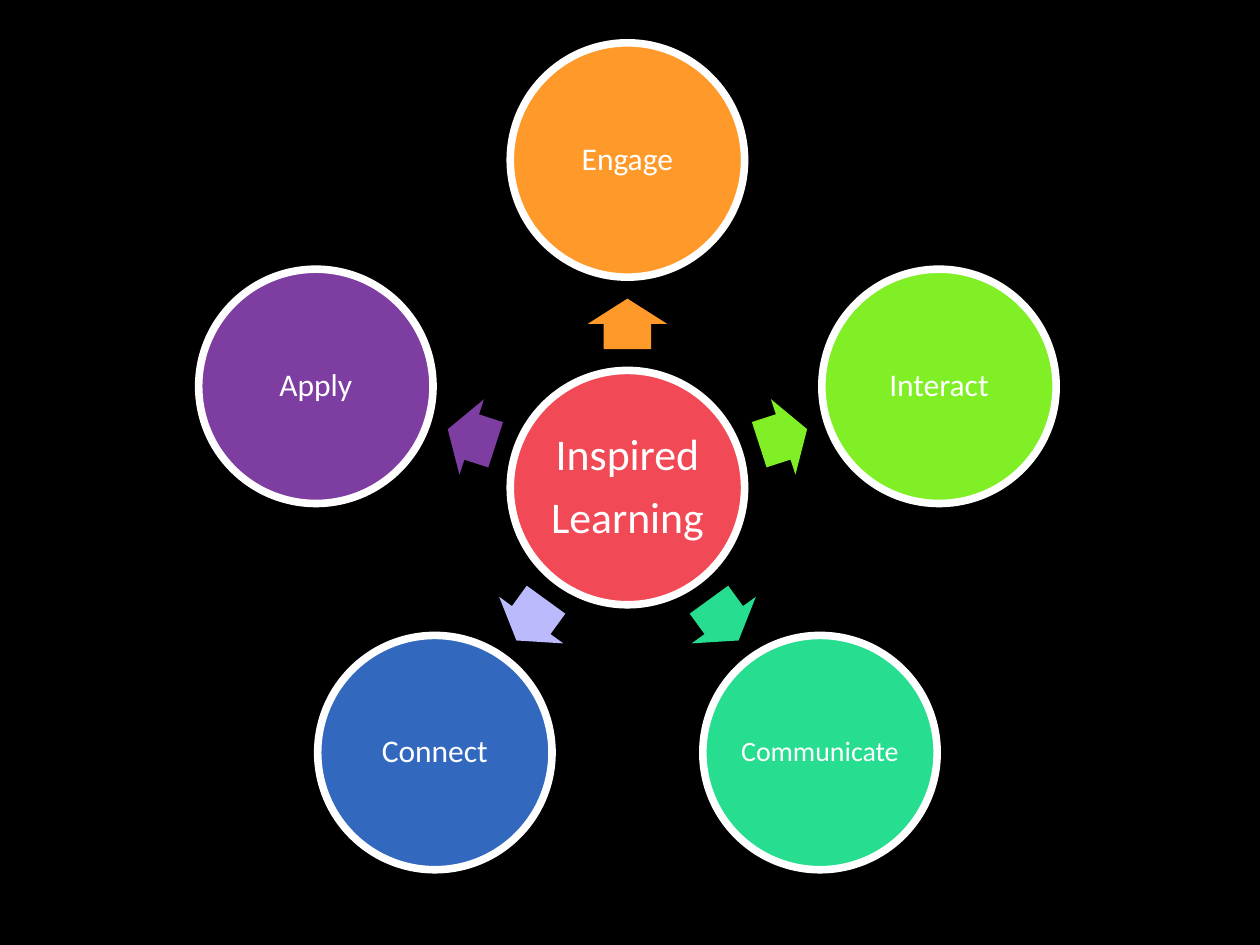
import math

import pptx
import pptx.dml.color
import pptx.enum.shapes
import pptx.enum.text
import pptx.util

Inches, Pt = pptx.util.Inches, pptx.util.Pt
SHAPE = pptx.enum.shapes.MSO_SHAPE

HUB = (["Inspired", "Learning"], 25, "F14955")
# label, text size, circle colour, arrow colour; clockwise from the top
SPOKES = [
    ("Engage", 18, "FF9929", "FF9929"),
    ("Interact", 18, "80EF26", "80EF26"),
    ("Communicate", 16, "26DD90", "26DD90"),
    ("Connect", 18, "3269BF", "BABAFD"),
    ("Apply", 18, "7D3DA1", "7D3DA1"),
]
CENTER_X, CENTER_Y = 4.98, 3.87
CIRCLE_RADIUS, ARROW_RADIUS = 2.6, 1.3
DIAMETER = 1.86
ARROW_W, ARROW_H = 0.4, 0.63
INSET = 0.03


def color(value):
    return pptx.dml.color.RGBColor.from_string(value)


def add_filled(s, kind, cx, cy, w, h, fill):
    """Add a preset shape centred on (cx, cy), without shadow or outline."""
    sp = s.shapes.add_shape(kind, Inches(cx - w / 2), Inches(cy - h / 2), Inches(w), Inches(h))
    sp.shadow.inherit = False
    sp.fill.solid()
    sp.fill.fore_color.rgb = color(fill)
    sp.line.fill.background()
    return sp


def add_circle(s, cx, cy, lines, size, fill):
    sp = add_filled(s, SHAPE.OVAL, cx, cy, DIAMETER, DIAMETER, fill)
    sp.line.color.rgb = color("FFFFFF")
    sp.line.width = Pt(4.33)
    tf = sp.text_frame
    tf.word_wrap = True
    tf.vertical_anchor = pptx.enum.text.MSO_ANCHOR.MIDDLE
    tf.margin_left = tf.margin_right = tf.margin_top = tf.margin_bottom = Inches(INSET)
    tf.text = "\n".join(lines)
    for p in tf.paragraphs:
        p.alignment = pptx.enum.text.PP_ALIGN.CENTER
        p.line_spacing = 0.9
        p.space_after = Pt(size * 0.35)
        p.font.name = "Calibri"
        p.font.size = Pt(size)
        p.font.color.rgb = color("FFFFFF")


def on_ring(radius, angle):
    """Return the point at an angle in degrees, clockwise from the right."""
    a = math.radians(angle)
    return CENTER_X + radius * math.cos(a), CENTER_Y + radius * math.sin(a)


def main():
    prs = pptx.Presentation()
    prs.slide_width, prs.slide_height = Inches(10), Inches(7.5)
    s = prs.slides.add_slide(prs.slide_layouts[6])
    s.background.fill.solid()
    s.background.fill.fore_color.rgb = color("000000")

    add_circle(s, CENTER_X, CENTER_Y, *HUB)
    for i, (label, size, fill, arrow_fill) in enumerate(SPOKES):
        angle = (270 + i * 360 / len(SPOKES)) % 360
        arrow = add_filled(s, SHAPE.RIGHT_ARROW, *on_ring(ARROW_RADIUS, angle),
                           ARROW_W, ARROW_H, arrow_fill)
        arrow.adjustments[0], arrow.adjustments[1] = 0.6, 0.5
        arrow.rotation = angle
        add_circle(s, *on_ring(CIRCLE_RADIUS, angle), [label], size, fill)

    prs.save("out.pptx")


if __name__ == "__main__":
    main()
